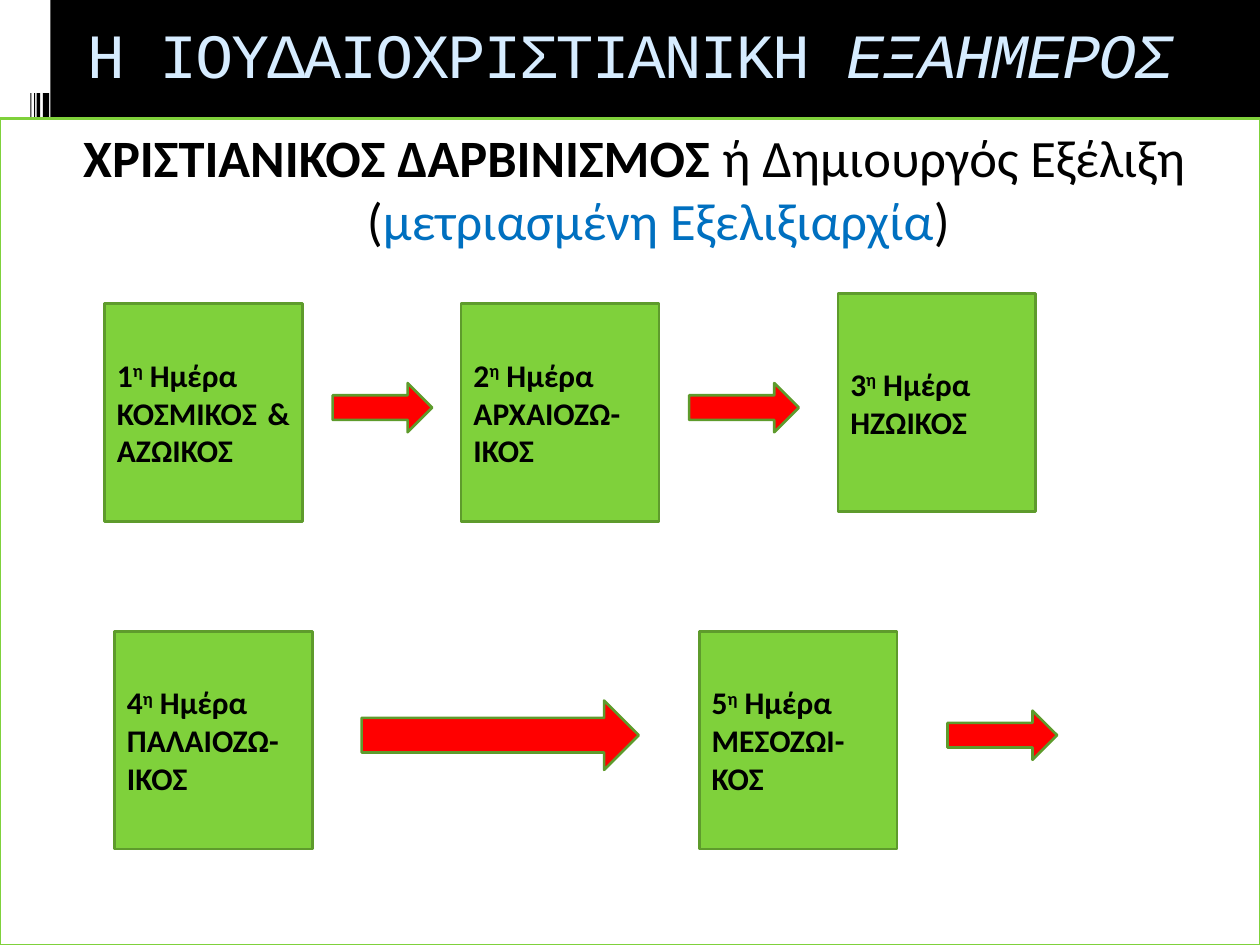
from dataclasses import dataclass

from pptx import Presentation
from pptx.dml.color import RGBColor
from pptx.enum.shapes import MSO_SHAPE
from pptx.enum.text import MSO_ANCHOR, PP_ALIGN
from pptx.util import Inches, Pt

BLACK, WHITE = "000000", "FFFFFF"
GREEN, DARK_GREEN, RED, BLUE, PALE_BLUE = "7FD13B", "5E9B2C", "FF0000", "0070C0", "D6ECFF"
DAY_WIDTH, DAY_HEIGHT = 1.57, 1.73


@dataclass
class Day:
    number: int
    era: str
    left: float
    top: float


@dataclass
class Arrow:
    left: float
    top: float
    width: float
    height: float = 0.39


DAYS = [
    Day(1, "ΚΟΣΜΙΚΟΣ & ΑΖΩΙΚΟΣ", 0.83, 2.41),
    Day(2, "ΑΡΧΑΙΟΖΩ-ΙΚΟΣ", 3.66, 2.41),
    Day(3, "ΗΖΩΙΚΟΣ", 6.65, 2.33),
    Day(4, "ΠΑΛΑΙΟΖΩ-ΙΚΟΣ", 0.91, 5.01),
    Day(5, "ΜΕΣΟΖΩΙ-ΚΟΣ", 5.55, 5.01),
]
ARROWS = [
    Arrow(2.64, 3.04, 0.79),
    Arrow(5.47, 3.04, 0.87),
    Arrow(2.87, 5.56, 2.2, 0.55),
    Arrow(7.52, 5.64, 0.87),
]
# Left edge and width of each bar of the ornament
BARS = [(0.34, 0.05), (0.29, 0.03), (0.27, 0.01), (0.24, 0.01)]


def color(value: str) -> RGBColor:
    return RGBColor.from_string(value)


def add_span(para, text: str, *, size: float, font: str = "Calibri", ink: str = BLACK,
             bold: bool = False, italic: bool = False, raised: bool = False,
             spacing: float = 0) -> None:
    span = para.add_run()
    span.text = text
    span.font.size = Pt(size)
    span.font.name = font
    span.font.bold = bold
    span.font.italic = italic
    span.font.color.rgb = color(ink)
    properties = span.font._element
    if raised:
        properties.set("baseline", "30000")
    if spacing:
        properties.set("spc", str(int(spacing * 100)))


def add_box(page, left: float, top: float, width: float, height: float, *, fill: str,
            line: str | None = None, kind: MSO_SHAPE = MSO_SHAPE.RECTANGLE):
    box = page.shapes.add_shape(kind, Inches(left), Inches(top), Inches(width), Inches(height))
    box.shadow.inherit = False
    box.fill.solid()
    box.fill.fore_color.rgb = color(fill)
    if line:
        box.line.color.rgb = color(line)
        box.line.width = Pt(1.5)
    else:
        box.line.fill.background()
    return box


def add_title(page) -> None:
    title = page.shapes.title
    title.left, title.top, title.width, title.height = (
        Inches(0), Inches(0), Inches(10), Inches(0.92))
    frame = title.text_frame
    frame.word_wrap = True
    frame.vertical_anchor = MSO_ANCHOR.TOP
    frame.margin_top = Inches(0.12)
    para = frame.paragraphs[0]
    para.alignment = PP_ALIGN.CENTER
    style = dict(size=36, font="Courier New", ink=PALE_BLUE, spacing=-1)
    add_span(para, "Η ΙΟΥΔΑΙΟΧΡΙΣΤΙΑΝΙΚΗ ", **style)
    add_span(para, "ΕΞΑΗΜΕΡΟΣ", italic=True, **style)


def add_panel(page) -> None:
    """Draw the white content area with its heading."""
    panel = add_box(page, 0, 0.94, 10, 6.56, fill=WHITE, line=GREEN)
    frame = panel.text_frame
    frame.word_wrap = True
    frame.vertical_anchor = MSO_ANCHOR.TOP
    para = frame.paragraphs[0]
    para.alignment = PP_ALIGN.CENTER
    indents = para._p.get_or_add_pPr()
    indents.set("marL", str(Inches(0.45)))
    indents.set("indent", str(Inches(-0.38)))
    add_span(para, "ΧΡΙΣΤΙΑΝΙΚΟΣ ΔΑΡΒΙΝΙΣΜΟΣ", size=30, bold=True)
    add_span(para, " ή Δημιουργός Εξέλιξη (", size=30)
    add_span(para, "μετριασμένη Εξελιξιαρχία", size=30, ink=BLUE)
    add_span(para, ")", size=30)


def add_day(page, day: Day) -> None:
    box = add_box(page, day.left, day.top, DAY_WIDTH, DAY_HEIGHT, fill=GREEN, line=DARK_GREEN)
    frame = box.text_frame
    frame.word_wrap = True
    frame.vertical_anchor = MSO_ANCHOR.MIDDLE
    heading, era = frame.paragraphs[0], frame.add_paragraph()
    heading.alignment = era.alignment = PP_ALIGN.JUSTIFY
    add_span(heading, str(day.number), size=18, bold=True)
    add_span(heading, "η", size=18, bold=True, raised=True)
    add_span(heading, " Ημέρα", size=18, bold=True)
    add_span(era, day.era, size=18, bold=True)


def main() -> None:
    deck = Presentation()
    deck.slide_width, deck.slide_height = Inches(10), Inches(7.5)
    page = deck.slides.add_slide(deck.slide_layouts[5])
    page.background.fill.solid()
    page.background.fill.fore_color.rgb = color(BLACK)

    add_box(page, 0, 0, 0.4, 7.5, fill=WHITE)
    for left, width in BARS:
        add_box(page, left, 0.74, width, 0.4, fill=BLACK)
    add_title(page)
    add_panel(page)
    for day in DAYS:
        add_day(page, day)
    for arrow in ARROWS:
        add_box(page, arrow.left, arrow.top, arrow.width, arrow.height,
                fill=RED, line=DARK_GREEN, kind=MSO_SHAPE.RIGHT_ARROW)
    deck.save("out.pptx")


if __name__ == "__main__":
    main()
